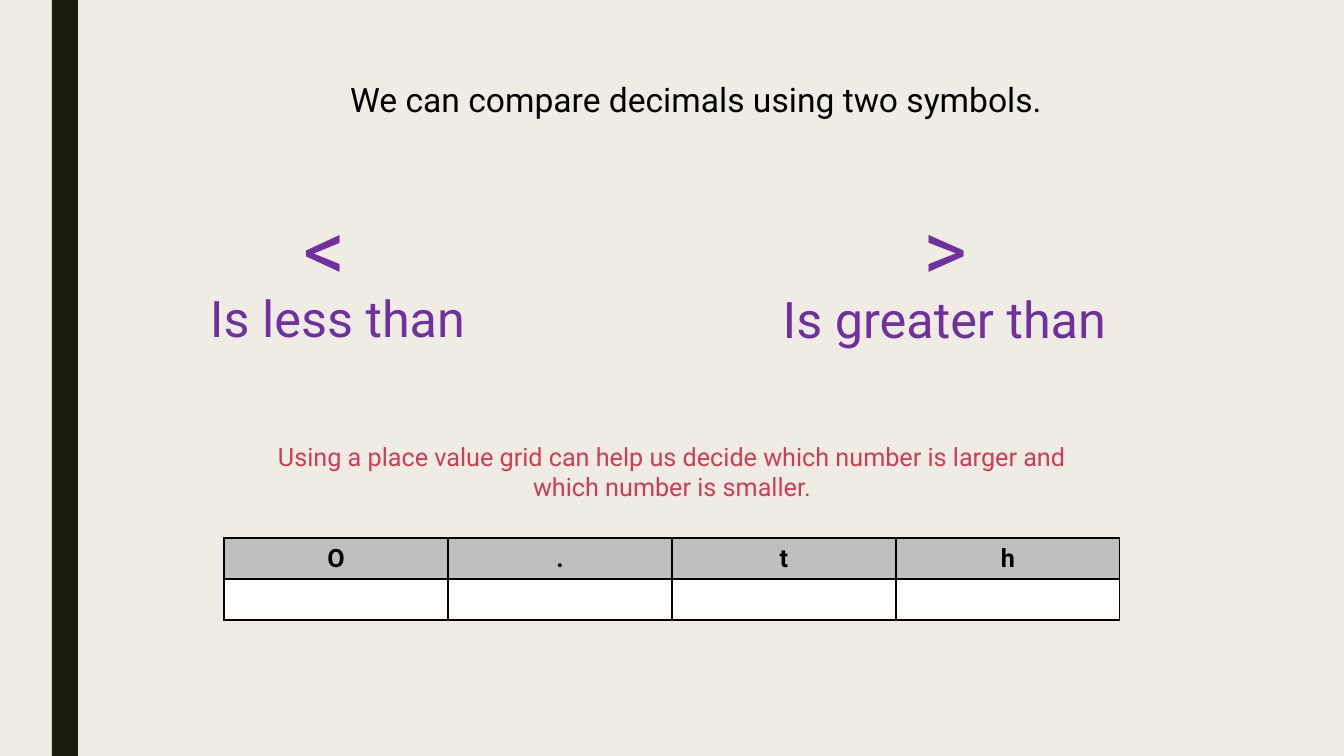
from lxml.etree import SubElement
from pptx import Presentation
from pptx.dml.color import RGBColor
from pptx.enum.shapes import MSO_SHAPE
from pptx.enum.text import MSO_ANCHOR, MSO_AUTO_SIZE, PP_ALIGN
from pptx.oxml.ns import qn
from pptx.util import Emu, Pt

PX_PER_INCH = 100.8
CREAM = RGBColor(0xEF, 0xED, 0xE3)
DARK = RGBColor(0x19, 0x1B, 0x0E)
BLACK = RGBColor(0, 0, 0)
WHITE = RGBColor(0xFF, 0xFF, 0xFF)
GREY = RGBColor(0xBF, 0xBF, 0xBF)
PURPLE = RGBColor(0x70, 0x30, 0xA0)
RED = RGBColor(0xD1, 0x3B, 0x56)


def px(n):
    return Emu(round(n * 914400 / PX_PER_INCH))


class SlideBuilder:
    font = "Roboto"

    def __init__(self, prs):
        self.slide = prs.slides.add_slide(prs.slide_layouts[6])
        fill = self.slide.background.fill
        fill.solid()
        fill.fore_color.rgb = CREAM

    def bar(self, x, y, w, h, color):
        sp = self.slide.shapes.add_shape(MSO_SHAPE.RECTANGLE, px(x), px(y), px(w), px(h))
        sp.shadow.inherit = False
        sp.fill.solid()
        sp.fill.fore_color.rgb = color
        sp.line.fill.background()

    def set_text(self, tf, text, size, color, bold=False):
        tf.text = text
        p = tf.paragraphs[0]
        p.alignment = PP_ALIGN.CENTER
        for r in p.runs:
            r.font.name = self.font
            r.font.size = Pt(size)
            r.font.bold = bold
            r.font.color.rgb = color

    def text(self, x, y, w, h, text, size, color):
        tf = self.slide.shapes.add_textbox(px(x), px(y), px(w), px(h)).text_frame
        tf.word_wrap = True
        tf.auto_size = MSO_AUTO_SIZE.SHAPE_TO_FIT_TEXT
        self.set_text(tf, text, size, color)

    def border(self, cell, color):
        # Borders must precede the fill in the cell properties
        tcPr = cell._tc.get_or_add_tcPr()
        for side in ("lnL", "lnR", "lnT", "lnB"):
            ln = SubElement(tcPr, qn(f"a:{side}"), w=str(Pt(1)))
            fill = SubElement(ln, qn("a:solidFill"))
            SubElement(fill, qn("a:srgbClr"), val=str(color))

    def grid(self, x, y, w, h, rows, fills, size):
        table = self.slide.shapes.add_table(
            len(rows), len(rows[0]), px(x), px(y), px(w), px(h)).table
        for i, (row, color) in enumerate(zip(rows, fills)):
            table.rows[i].height = px(h / len(rows))
            for j, label in enumerate(row):
                cell = table.cell(i, j)
                self.border(cell, BLACK)
                cell.fill.solid()
                cell.fill.fore_color.rgb = color
                cell.vertical_anchor = MSO_ANCHOR.MIDDLE
                if label:
                    self.set_text(cell.text_frame, label, size, BLACK, bold=True)


def main():
    prs = Presentation()
    prs.slide_width, prs.slide_height = px(1344), px(756)
    s = SlideBuilder(prs)

    # Side bar and heading
    s.bar(52, 0, 26, 756, DARK)
    s.text(216, 74, 960, 50, "We can compare decimals using two symbols.", 24, BLACK)

    # Comparison symbols with their meanings
    for symbol, symbol_x, meaning, meaning_x, meaning_y in (
        ("<", 288, "Is less than", 146, 282),
        (">", 908, "Is greater than", 753, 283),
    ):
        s.text(symbol_x, 192, 74, 112, symbol, 60, PURPLE)
        s.text(meaning_x, meaning_y, 383, 72, meaning, 36, PURPLE)

    # Place value grid and its explanation
    s.grid(224, 538, 896, 82, [("O", ".", "t", "h"), ("",) * 4], (GREY, WHITE), 18)
    s.text(240, 436, 864, 72,
           "Using a place value grid can help us decide which number is larger "
           "and which number is smaller.", 18, RED)

    prs.save("out.pptx")


if __name__ == "__main__":
    main()
